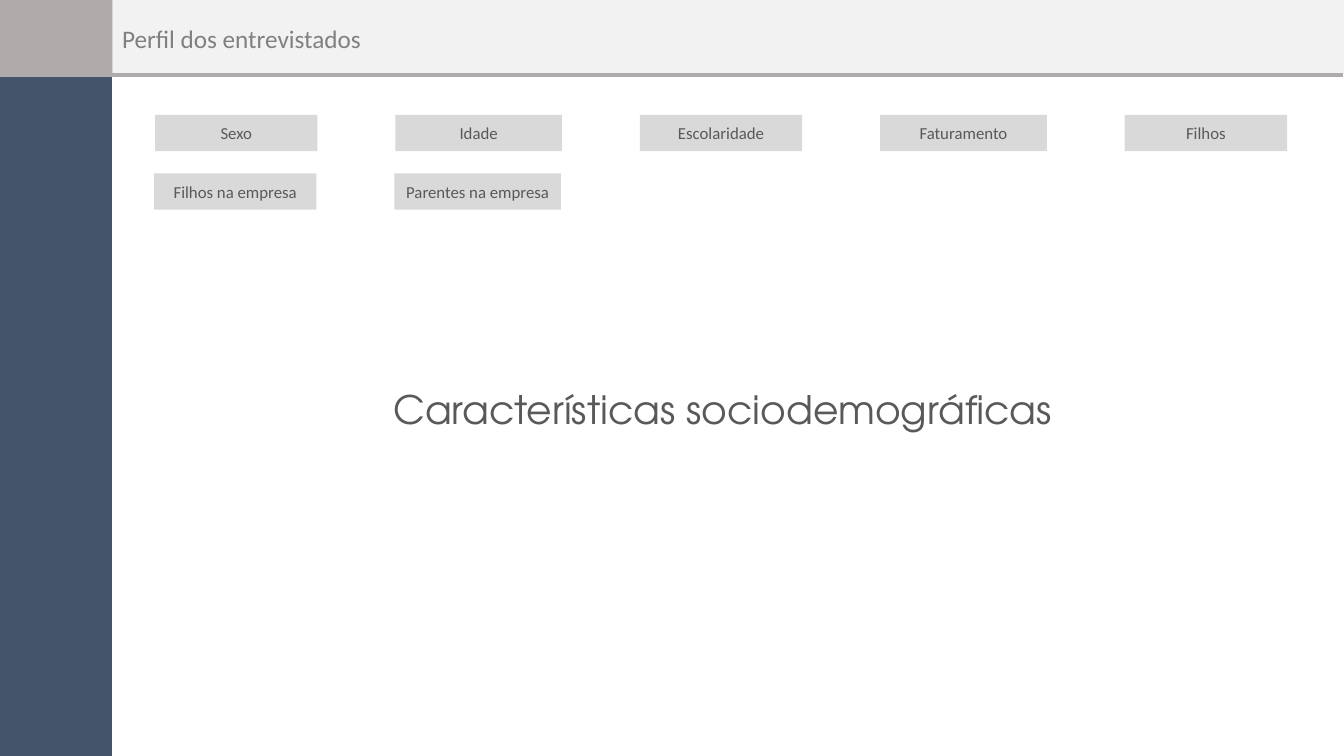
from dataclasses import dataclass
from lxml.etree import SubElement
from pptx import Presentation
from pptx.dml.color import RGBColor
from pptx.enum.shapes import MSO_CONNECTOR as Connector, MSO_SHAPE as Shape
from pptx.enum.text import MSO_ANCHOR as Anchor, MSO_AUTO_SIZE as AutoSize, PP_ALIGN as Align
from pptx.oxml.ns import qn
from pptx.util import Pt


@dataclass(frozen=True)
class Theme:
    navy: str = "44546A"
    taupe: str = "AFABAB"
    band: str = "F2F2F2"
    button: str = "D9D9D9"
    title: str = "808080"
    text: str = "595959"
    body_font: str = "Calibri"
    heading_font: str = "TeX Gyre Adventor"
    title_size: int = 18
    heading_size: int = 28
    button_size: int = 12


theme = Theme()

prs = Presentation()
prs.slide_width, prs.slide_height = Pt(960), Pt(540)
slide = prs.slides.add_slide(prs.slide_layouts[5])
shapes = slide.shapes


def add_block(left, top, width, height, color):
    block = shapes.add_shape(Shape.RECTANGLE, Pt(left), Pt(top), Pt(width), Pt(height))
    block.shadow.inherit = False
    block.fill.solid()
    block.fill.fore_color.rgb = RGBColor.from_string(color)
    block.line.fill.background()
    return block


def write(holder, text, font, size, color, align, anchor):
    frame = holder.text_frame
    frame.word_wrap = True
    frame.vertical_anchor = anchor
    paragraph = frame.paragraphs[0]
    paragraph.alignment = align
    run = paragraph.add_run()
    run.text = text
    run.font.name = font
    run.font.size = Pt(size)
    run.font.color.rgb = RGBColor.from_string(color)


for left, width, height, color in [
    (0, 80, 540, theme.navy),
    (0, 80.5, 53.3, theme.taupe),
    (80.5, 879.5, 53.3, theme.band),
]:
    add_block(left, 0, width, height, color)

header_rule = shapes.add_connector(Connector.STRAIGHT, Pt(0), Pt(53.3), Pt(959), Pt(53.3))
header_rule.line.color.rgb = RGBColor.from_string(theme.taupe)
header_rule.line.width = Pt(3)
SubElement(header_rule.element.spPr, qn("a:effectLst"))

title = shapes.title
title.left, title.top, title.width, title.height = Pt(80), Pt(13), Pt(405), Pt(29)
shapes.element.append(title.element)
write(title, "Perfil dos entrevistados", theme.body_font, theme.title_size, theme.title,
      Align.LEFT, Anchor.TOP)

heading = shapes.add_textbox(Pt(80), Pt(272), Pt(880), Pt(41))
write(heading, "Características sociodemográficas ", theme.heading_font, theme.heading_size,
      theme.text, Align.CENTER, Anchor.TOP)

for topic_box in (title, heading):
    topic_box.text_frame.auto_size = AutoSize.SHAPE_TO_FIT_TEXT

topic_rows = [
    (168.8, 82, ["Sexo", "Idade", "Escolaridade", "Faturamento", "Filhos"]),
    (168.1, 123.8, ["Filhos na empresa", "Parentes na empresa"]),
]
for first_center, top, topics in topic_rows:
    for column, topic in enumerate(topics):
        width = 119 if column % 2 else 116
        center = first_center + 173.15 * column
        button = add_block(center - width / 2, top, width, 26, theme.button)
        write(button, topic, theme.body_font, theme.button_size, theme.text,
              Align.CENTER, Anchor.MIDDLE)

prs.save("out.pptx")
